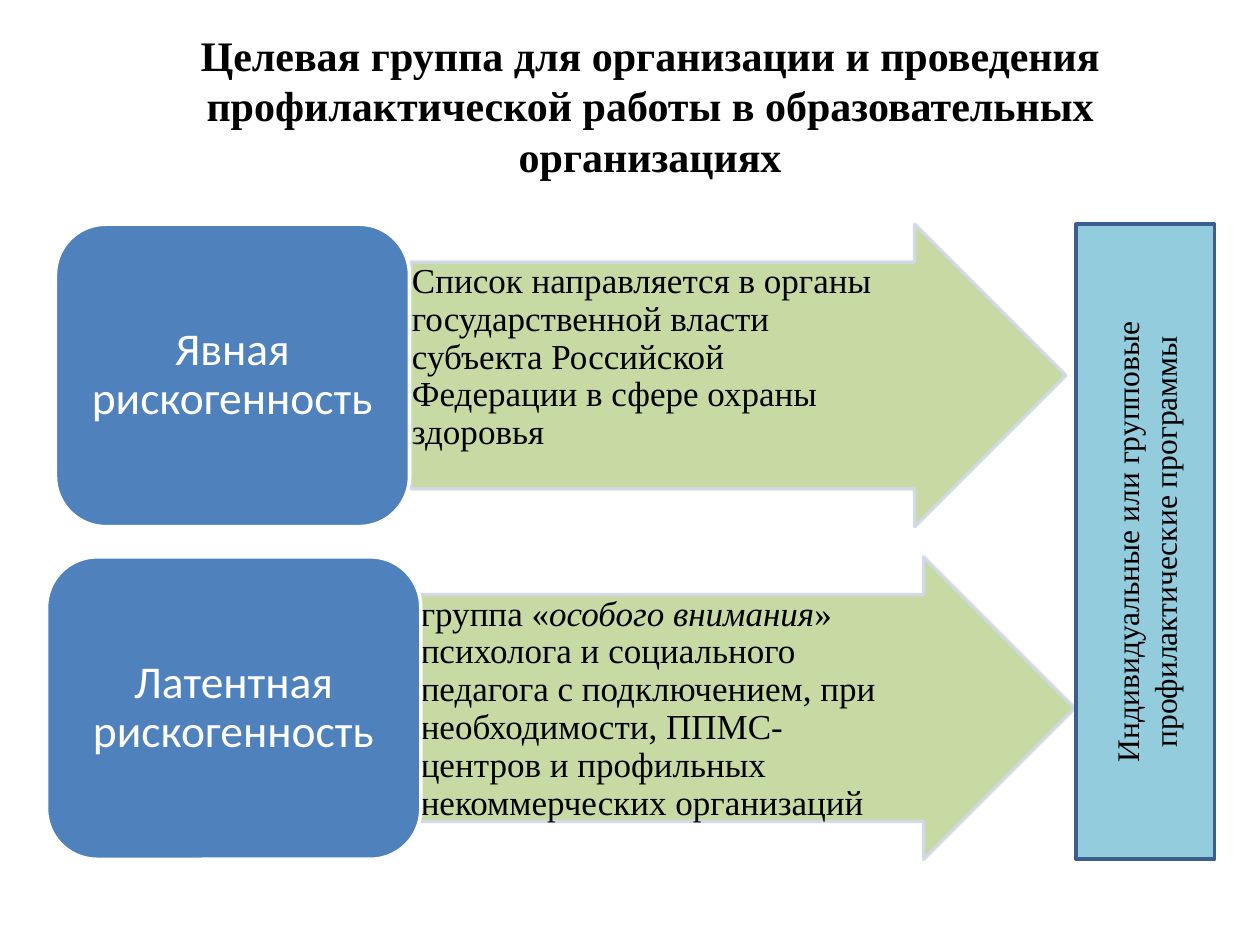
from dataclasses import dataclass

from lxml import etree
from pptx import Presentation
from pptx.dml.color import RGBColor
from pptx.enum.shapes import MSO_SHAPE
from pptx.enum.text import MSO_ANCHOR, MSO_AUTO_SIZE, PP_ALIGN
from pptx.oxml.ns import qn
from pptx.util import Emu, Pt

ARROW, ROUND, RECT = (MSO_SHAPE.RIGHT_ARROW, MSO_SHAPE.ROUNDED_RECTANGLE,
                      MSO_SHAPE.RECTANGLE)
TOP, MIDDLE = MSO_ANCHOR.TOP, MSO_ANCHOR.MIDDLE
LEFT, CENTER = PP_ALIGN.LEFT, PP_ALIGN.CENTER
TITLE_ONLY = 5
PX = 9144  # EMU in one px, 100 px to the inch


@dataclass(frozen=True)
class Theme:
    serif: str = "Times New Roman"
    sans: str = "Calibri"
    black: str = "000000"
    white: str = "FFFFFF"
    blue: str = "4F81BD"
    green: str = "C3D69B"
    arrow_line: str = "D0D8E8"
    teal: str = "93CDDD"
    teal_line: str = "3A5F8C"
    title_size: int = 24
    group_size: int = 26
    action_size: int = 20
    program_size: int = 18
    line_width: int = 2
    arrow_alpha: int = 90


def px(*values):
    return [Emu(v * PX) for v in values]


class Builder:
    def __init__(self, prs, theme):
        self.theme = theme
        self.slide = prs.slides.add_slide(prs.slide_layouts[TITLE_ONLY])

    def add_text(self, sp, runs, size, font, color, align=CENTER, anchor=MIDDLE,
                 insets=(10, 5, 10, 5), spacing=None, bold=False):
        """Fill a shape with one paragraph of (text, italic) runs."""
        tf = sp.text_frame
        tf.word_wrap = True
        tf.auto_size = MSO_AUTO_SIZE.NONE
        tf.vertical_anchor = anchor
        (tf.margin_left, tf.margin_top,
         tf.margin_right, tf.margin_bottom) = px(*insets)
        p = tf.paragraphs[0]
        p.alignment = align
        p.line_spacing = spacing
        for text, italic in runs:
            r = p.add_run()
            r.text = text
            r.font.name, r.font.size = font, Pt(size)
            r.font.bold, r.font.italic = bold, italic
            r.font.color.rgb = RGBColor.from_string(color)

    def shape(self, kind, box, fill, line):
        sp = self.slide.shapes.add_shape(kind, *px(*box))
        sp.shadow.inherit = False
        sp.fill.solid()
        sp.fill.fore_color.rgb = RGBColor.from_string(fill)
        sp.line.color.rgb = RGBColor.from_string(line)
        sp.line.width = Pt(self.theme.line_width)
        return sp

    def title(self, box, text):
        t = self.theme
        sp = self.slide.shapes.title
        sp.left, sp.top, sp.width, sp.height = px(*box)
        self.add_text(sp, [(text, False)], t.title_size, t.serif, t.black,
                      bold=True)

    def action_arrow(self, box, runs):
        t = self.theme
        sp = self.shape(ARROW, box, t.green, t.arrow_line)
        sp.adjustments[0], sp.adjustments[1] = 0.75, 0.5
        for color in sp._element.spPr.iter(qn("a:srgbClr")):
            etree.SubElement(color, qn("a:alpha"), val=str(t.arrow_alpha * 1000))
        # The wide right inset keeps the text clear of the arrowhead.
        self.add_text(sp, runs, t.action_size, t.serif, t.black, LEFT, TOP,
                      (1, 1, 61, 1), 0.9)

    def group_box(self, box, text):
        t = self.theme
        sp = self.shape(ROUND, box, t.blue, t.white)
        self.add_text(sp, [(text, False)], t.group_size, t.sans, t.white,
                      insets=(11, 5, 11, 5), spacing=0.9)

    def program_bar(self, box, text):
        t = self.theme
        sp = self.shape(RECT, box, t.teal, t.teal_line)
        self.add_text(sp, [(text, False)], t.program_size, t.serif, t.black)
        sp.text_frame._txBody.bodyPr.set("vert", "vert270")


def main():
    prs = Presentation()
    prs.slide_width, prs.slide_height = px(1000, 750)
    s = Builder(prs, Theme())
    s.title((51, 21, 930, 125),
            "Целевая группа для организации и проведения профилактической "
            "работы в образовательных организациях")

    top, row_height, pitch = 178, 240, 264
    rows = [
        (44, 281, 326, "Явная рискогенность",
         [("Список направляется в органы государственной власти субъекта "
           "Российской Федерации в сфере охраны здоровья", False)]),
        (37, 297, 333, "Латентная рискогенность",
         [("группа «", False), ("особого внимания", True),
          ("» психолога и социального педагога с подключением, при "
           "необходимости, ППМС-центров и профильных некоммерческих "
           "организаций", False)]),
    ]
    for i, (left, width, arrow_left, group, action) in enumerate(rows):
        y = top + i * pitch
        s.action_arrow((arrow_left, y, 520, row_height), action)
        s.group_box((left, y, width, row_height), group)

    s.program_bar((854, top, 110, pitch + row_height),
                  "Индивидуальные или групповые профилактические программы")
    prs.save("out.pptx")


if __name__ == "__main__":
    main()
